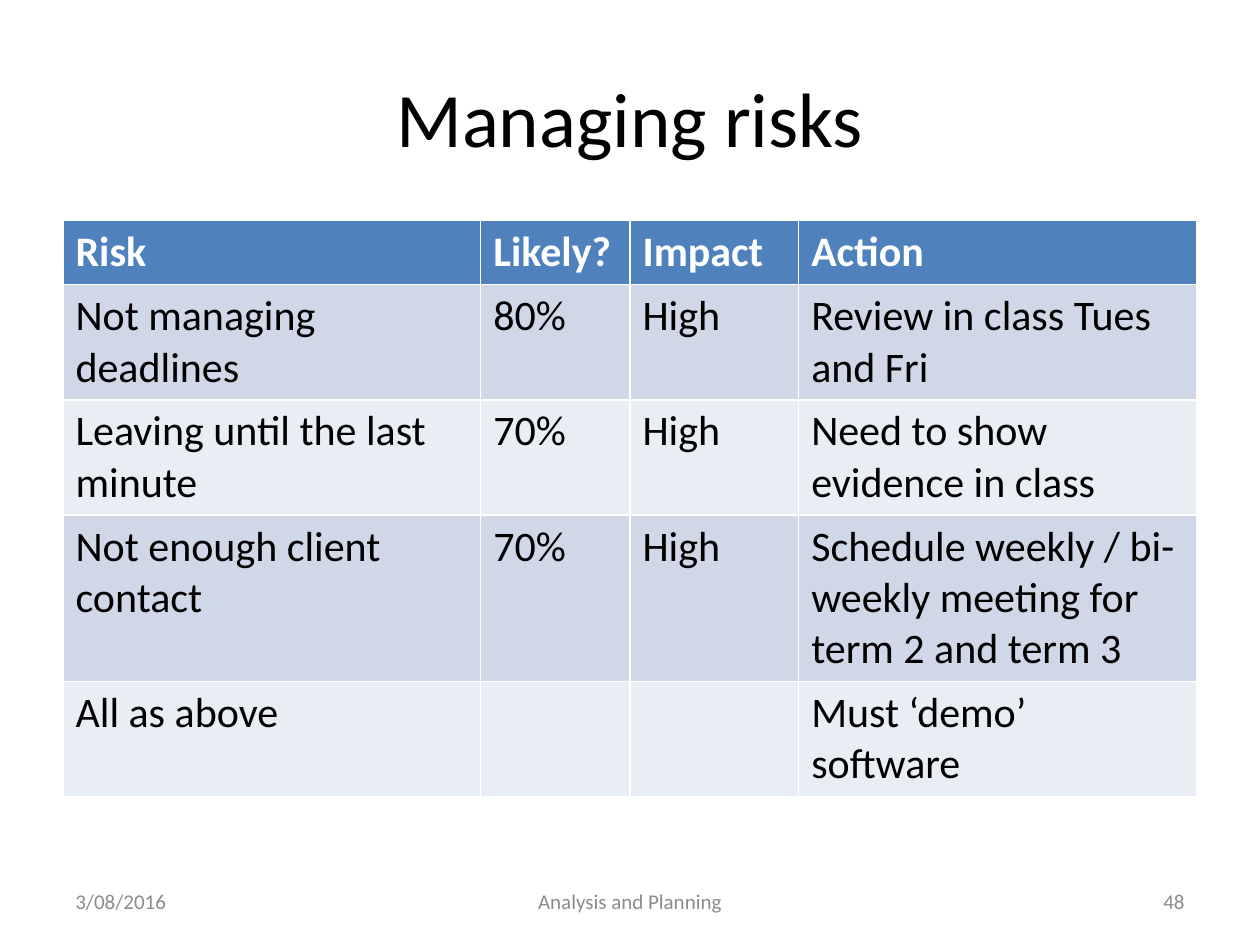
"""Build the "Managing risks" slide with its risk table and footer."""
import pptx
import pptx.dml.color
import pptx.enum.text
import pptx.util

Cm = pptx.util.Cm
Side = pptx.enum.text.PP_ALIGN
Mid = pptx.enum.text.MSO_ANCHOR.MIDDLE


def tint(code):
    return pptx.dml.color.RGBColor.from_string(code)


def write(frame, text, size=24, color="000000", bold=False, side=Side.LEFT):
    frame.word_wrap = True
    line = frame.paragraphs[0]
    line.alignment = side
    run = line.add_run()
    run.text = text
    run.font.name = "Calibri"
    run.font.size = pptx.util.Pt(size)
    run.font.bold = bold
    run.font.color.rgb = tint(color)


deck = pptx.Presentation()
deck.slide_width, deck.slide_height = Cm(25.4), Cm(19.05)
slide = deck.slides.add_slide(deck.slide_layouts[5])

title = slide.shapes.title
title.left, title.top = Cm(1.27), Cm(0.76)
title.width, title.height = Cm(22.86), Cm(3.18)
title.text_frame.vertical_anchor = Mid
write(title.text_frame, "Managing risks", size=44, side=Side.CENTER)

rows = [
    ["Risk", "Likely?", "Impact", "Action"],
    ["Not managing deadlines", "80%", "High", "Review in class Tues and Fri"],
    ["Leaving until the last minute", "70%", "High", "Need to show evidence in class"],
    ["Not enough client contact", "70%", "High",
     "Schedule weekly / bi-weekly meeting for term 2 and term 3"],
    ["All as above", "", "", "Must ‘demo’ software"],
]
widths = [8.42, 3.01, 3.4, 8.03]
high = 1.03
table = slide.shapes.add_table(
    len(rows), len(widths), Cm(1.27), Cm(4.45), Cm(sum(widths)), Cm(high * len(rows))
).table
for col, width in zip(table.columns, widths):
    col.width = Cm(width)

for r, row in enumerate(rows):
    head = r == 0
    fill = "4F81BD" if head else ("E9EDF4", "D0D8E8")[r % 2]
    for c, text in enumerate(row):
        cell = table.cell(r, c)
        cell.fill.solid()
        cell.fill.fore_color.rgb = tint(fill)
        if text:
            write(cell.text_frame, text, bold=head, color="FFFFFF" if head else "000000")

foots = [
    ("3/08/2016", 1.27, 5.93, Side.LEFT),
    ("Analysis and Planning", 8.68, 8.04, Side.CENTER),
    ("48", 18.2, 5.93, Side.RIGHT),
]
for text, left, width, side in foots:
    box = slide.shapes.add_textbox(Cm(left), Cm(17.66), Cm(width), Cm(1.01))
    box.text_frame.vertical_anchor = Mid
    write(box.text_frame, text, size=12, color="8C8C8C", side=side)

deck.save("out.pptx")
